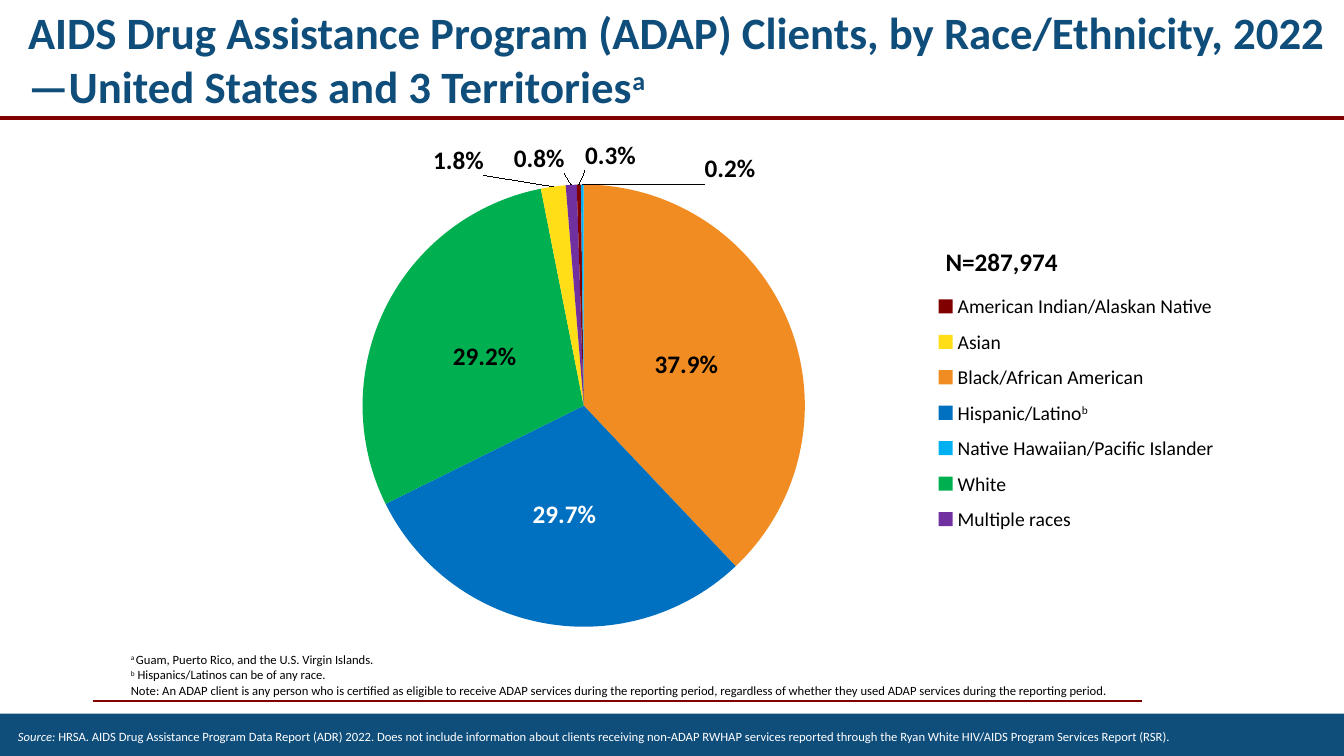
from lxml import etree
from pptx import Presentation
from pptx.chart.data import CategoryChartData
from pptx.dml.color import RGBColor
from pptx.enum.chart import XL_CHART_TYPE, XL_LABEL_POSITION
from pptx.enum.shapes import MSO_CONNECTOR, MSO_SHAPE
from pptx.enum.text import MSO_ANCHOR
from pptx.oxml import parse_xml
from pptx.oxml.ns import nsdecls, qn
from pptx.util import Inches, Pt

WIDTH, HEIGHT = 13.33, 7.5
FONT = "Calibri"
WHITE = RGBColor(0xFF, 0xFF, 0xFF)
BLACK = RGBColor(0x00, 0x00, 0x00)
NAVY = RGBColor(0x0F, 0x4D, 0x7B)
MAROON = RGBColor(0x80, 0x00, 0x00)
ORANGE = RGBColor(0xF1, 0x8C, 0x22)
BLUE = RGBColor(0x00, 0x70, 0xC0)
GREEN = RGBColor(0x00, 0xB0, 0x50)
YELLOW = RGBColor(0xFF, 0xDE, 0x17)
PURPLE = RGBColor(0x70, 0x30, 0xA0)
SKY = RGBColor(0x00, 0xB0, 0xF0)

# Share, slice colour, label colour, label shift as shares of the chart (None: centred)
SLICES = [
    (0.379, ORANGE, BLACK, None),
    (0.297, BLUE, WHITE, None),
    (0.292, GREEN, BLACK, None),
    (0.018, YELLOW, BLACK, (-0.065, -0.01)),
    (0.008, PURPLE, BLACK, (-0.03, -0.01)),
    (0.003, MAROON, BLACK, (0.03, -0.015)),
    (0.002, SKY, BLACK, (0.14, 0.01)),
]
# Colour, label box width, label runs
LEGEND = [
    (MAROON, 3.12, ["American Indian/Alaskan Native"]),
    (YELLOW, 0.89, ["Asian"]),
    (ORANGE, 2.36, ["Black/African American"]),
    (BLUE, 1.79, ["Hispanic/Latino", "^b"]),
    (SKY, 2.99, ["Native Hawaiian/Pacific Islander"]),
    (GREEN, 0.95, ["White"]),
    (PURPLE, 1.88, ["Multiple races"]),
]
FOOTNOTES = [
    ["^a ", "Guam, Puerto Rico, and the U.S. Virgin Islands."],
    ["^b", " Hispanics/Latinos can be of any race."],
    ["Note: An ADAP client is any person who is certified as eligible to receive ADAP "
     "services during the reporting period, regardless of whether they used ADAP "
     "services during the reporting period."],
]


def add_text(slide, box, lines, size, color=BLACK, bold=False, anchor=MSO_ANCHOR.TOP):
    """Each line is a list of runs; a leading ^ marks superscript, _ italic."""
    frame = slide.shapes.add_textbox(*map(Inches, box)).text_frame
    frame.word_wrap = True
    frame.vertical_anchor = anchor
    for index, line in enumerate(lines):
        paragraph = frame.add_paragraph() if index else frame.paragraphs[0]
        for text in line:
            run = paragraph.add_run()
            run.text = text.lstrip("^_")
            run.font.name, run.font.size = FONT, Pt(size)
            run.font.color.rgb, run.font.bold = color, bold
            if text.startswith("_"):
                run.font.italic = True
            if text.startswith("^"):
                run.font._element.set("baseline", "30000")


def add_block(slide, box, color):
    block = slide.shapes.add_shape(MSO_SHAPE.RECTANGLE, *map(Inches, box))
    block.shadow.inherit = False
    block.fill.solid()
    block.fill.fore_color.rgb = color
    block.line.fill.background()


def add_rule(slide, left, right, top, weight):
    rule = slide.shapes.add_connector(
        MSO_CONNECTOR.STRAIGHT, *map(Inches, (left, top, right, top)))
    rule.line.color.rgb = MAROON
    rule.line.width = Pt(weight)
    etree.SubElement(rule._element.spPr, qn("a:effectLst"))


def add_header(slide, left, top, width, height):
    add_rule(slide, left, left + width, top + height, 3)
    title = ["AIDS Drug Assistance Program (ADAP) Clients, by Race/Ethnicity, 2022"
             "—United States and 3 Territories", "^a"]
    add_text(slide, (left + 0.18, top, width - 0.18, height), [title], 32, NAVY,
             True, MSO_ANCHOR.MIDDLE)


def add_footer(slide, left, top, width, height):
    add_rule(slide, left + 0.92, left + 11.33, top - 0.13, 1.5)
    add_block(slide, (left, top, width, height), NAVY)
    source = ["_Source: ", "HRSA. AIDS Drug Assistance Program Data Report (ADR) 2022. "
              "Does not include information about clients receiving non-ADAP RWHAP services "
              "reported through the Ryan White HIV/AIDS Program Services Report (RSR)."]
    add_text(slide, (left + 0.08, top + 0.1, 12.26, 0.25), [source], 9, WHITE)
    add_text(slide, (left + 1.2, top - 0.66, 10.13, 0.86), FOOTNOTES, 9)


def manual_layout(**values):
    parts = "".join(f'<c:{name} val="{value}"/>' for name, value in values.items())
    return parse_xml(f'<c:layout {nsdecls("c")}><c:manualLayout>{parts}'
                     '</c:manualLayout></c:layout>')


def style_label_font(font, color):
    font.name, font.size, font.bold = FONT, Pt(18), True
    font.color.rgb = color


def add_pie(slide, left, top, width, height):
    data = CategoryChartData(number_format="0.0%")
    data.categories = [str(number) for number in range(1, len(SLICES) + 1)]
    data.add_series("Series 1", [share for share, *_ in SLICES])
    chart = slide.shapes.add_chart(
        XL_CHART_TYPE.PIE, *map(Inches, (left, top, width, height)), data).chart
    chart.has_legend = chart.has_title = False
    chart.font.name, chart.font.size = FONT, Pt(10)
    chart.font.color.rgb = BLACK
    plot = chart.plots[0]
    plot.vary_by_categories = True

    plot_area = chart._chartSpace.find(".//" + qn("c:plotArea"))
    for layout in plot_area.findall(qn("c:layout")):
        plot_area.remove(layout)
    diameter = 4.39
    share_x, share_y = diameter / width, diameter / height
    plot_area.insert(0, manual_layout(
        layoutTarget="inner", xMode="edge", yMode="edge",
        x=round((1 - share_x) / 2, 3), y=round((1 - share_y) / 2, 3),
        w=round(share_x, 3), h=round(share_y, 3)))

    series = plot.series[0]
    labels = series.data_labels
    labels.show_value = True
    labels.number_format, labels.number_format_is_linked = "0.0%", False
    style_label_font(labels.font, BLACK)
    for leader in labels._element.findall(qn("c:showLeaderLines")):
        leader.set("val", "1")
    for index, (_, color, label_color, shift) in enumerate(SLICES):
        point = series.points[index]
        point.format.fill.solid()
        point.format.fill.fore_color.rgb = color
        point.format.line.fill.background()
        label = point.data_label
        style_label_font(label.font, label_color)
        label.position = XL_LABEL_POSITION.OUTSIDE_END if shift else XL_LABEL_POSITION.CENTER
        if shift:
            index_element = labels._element.findall(qn("c:dLbl"))[index].find(qn("c:idx"))
            index_element.addnext(manual_layout(x=shift[0], y=shift[1]))


def add_legend(slide, left, top, width, height):
    add_text(slide, (left, top, width, 0.4), [["N=287,974"]], 18, bold=True)
    swatch, first_row = 0.14, top + 0.58
    pitch = (top + height - swatch - first_row) / (len(LEGEND) - 1)
    for row, (color, label_width, label) in enumerate(LEGEND):
        row_top = first_row + row * pitch
        add_block(slide, (left + 0.03, row_top, swatch, swatch), color)
        add_text(slide, (left + 0.12, row_top - 0.1, label_width, 0.34), [label], 14)


def main():
    presentation = Presentation()
    presentation.slide_width, presentation.slide_height = Inches(WIDTH), Inches(HEIGHT)
    slide = presentation.slides.add_slide(presentation.slide_layouts[6])
    add_footer(slide, 0, 7.08, WIDTH, HEIGHT - 7.08)
    add_header(slide, 0, 0, WIDTH, 1.17)
    add_pie(slide, 0.56, 1.34, 10.47, 5.37)
    add_legend(slide, 9.28, 2.39, 2.86, 2.83)
    presentation.save("out.pptx")


if __name__ == "__main__":
    main()
